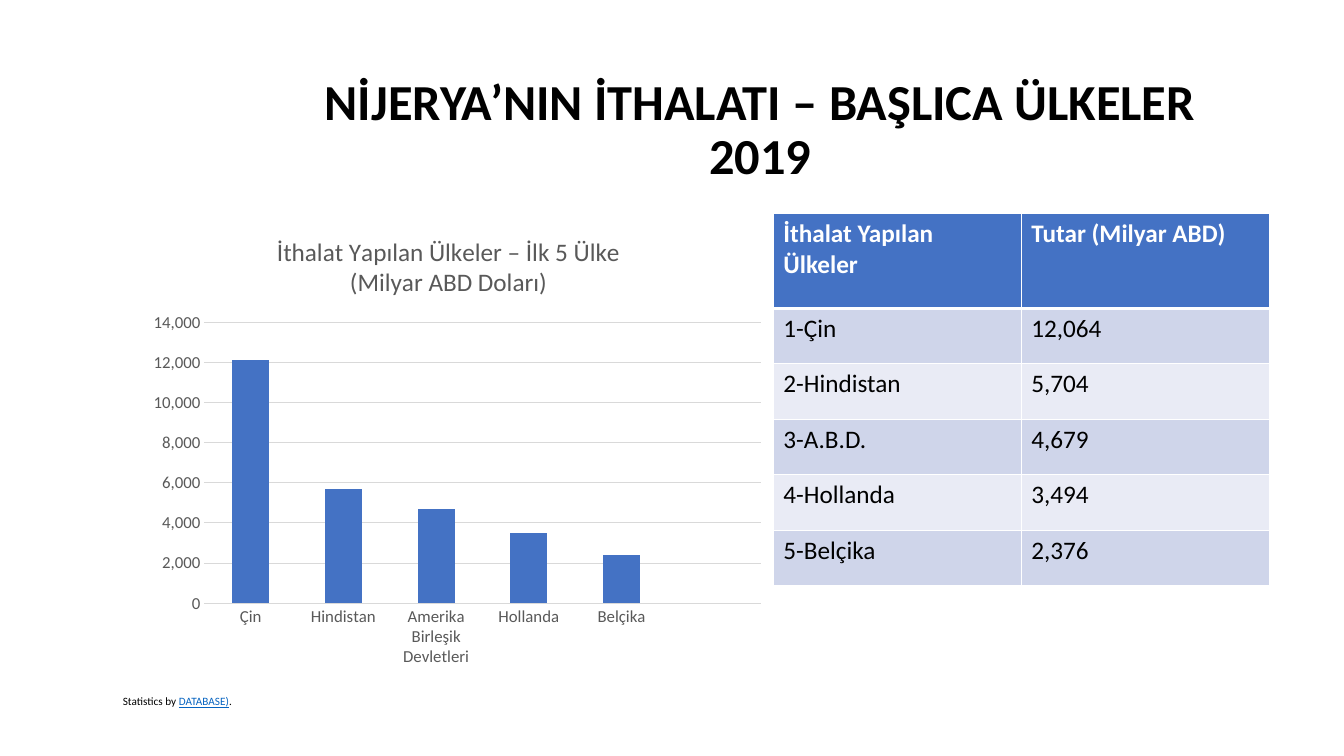
from dataclasses import dataclass

from pptx import Presentation
from pptx.chart.data import CategoryChartData
from pptx.dml.color import RGBColor
from pptx.enum.chart import XL_CHART_TYPE, XL_TICK_MARK
from pptx.enum.text import MSO_ANCHOR, PP_ALIGN
from pptx.oxml import parse_xml
from pptx.oxml.ns import nsdecls, qn
from pptx.util import Inches, Pt


@dataclass(frozen=True)
class Theme:
    font: str = "Calibri"
    black: str = "000000"
    white: str = "FFFFFF"
    blue: str = "4472C4"
    gray: str = "595959"
    grid: str = "D9D9D9"
    link: str = "0563C1"
    bands: tuple = ("CFD5EA", "E9EBF5")
    title: int = 36
    body: int = 18
    axis: int = 12
    note: int = 8


THEME = Theme()
ROWS = [
    ("İthalat Yapılan Ülkeler", "Tutar (Milyar ABD)"),
    ("1-Çin", "12,064"),
    ("2-Hindistan", "5,704"),
    ("3-A.B.D.", "4,679"),
    ("4-Hollanda", "3,494"),
    ("5-Belçika", "2,376"),
]
IMPORTS = [
    ("Çin", 12100),
    ("Hindistan", 5700),
    ("Amerika Birleşik Devletleri", 4700),
    ("Hollanda", 3500),
    ("Belçika", 2400),
    ("", None),
]


def set_attrs(target, values):
    for name, value in values.items():
        setattr(target, name, value)


def style_font(font, size, color, **extra):
    set_attrs(font, {"name": THEME.font, "size": Pt(size), **extra})
    font.color.rgb = RGBColor.from_string(color)


def add_run(p, text, size, color, **extra):
    r = p.add_run()
    r.text = text
    style_font(r.font, size, color, **extra)


def add_text(s, box, runs, anchor, **paragraph):
    tf = s.shapes.add_textbox(*map(Inches, box)).text_frame
    set_attrs(tf, {"word_wrap": True, "vertical_anchor": anchor})
    p = tf.paragraphs[0]
    set_attrs(p, paragraph)
    for text, size, color, extra in runs:
        add_run(p, text, size, color, **extra)


def set_border(cell, widths):
    tc_pr = cell._tc.get_or_add_tcPr()
    for i, (side, width) in enumerate(widths.items()):
        tc_pr.insert(i, parse_xml(
            f'<a:ln{side} {nsdecls("a")} w="{Pt(width)}"><a:solidFill>'
            f'<a:srgbClr val="{THEME.white}"/></a:solidFill></a:ln{side}>'))


def add_table(s, box, rows, header_height, row_height):
    table = s.shapes.add_table(len(rows), len(rows[0]), *map(Inches, box)).table
    for i, values in enumerate(rows):
        header = i == 0
        table.rows[i].height = Inches(header_height if header else row_height)
        fill = THEME.blue if header else THEME.bands[(i - 1) % 2]
        color = THEME.white if header else THEME.black
        for j, text in enumerate(values):
            cell = table.cell(i, j)
            cell.fill.solid()
            cell.fill.fore_color.rgb = RGBColor.from_string(fill)
            set_border(cell, {"L": 1, "R": 1, "T": 3 if i == 1 else 1, "B": 3 if header else 1})
            add_run(cell.text_frame.paragraphs[0], text, THEME.body, color, bold=header)


def set_layout(parent, index, target="", **place):
    old = parent.find(qn("c:layout"))
    if old is not None:
        parent.remove(old)
    inner = f'<c:layoutTarget val="{target}"/>' if target else ""
    inner += "".join(f'<c:{k}Mode val="edge"/>' for k in ("x", "y"))
    inner += "".join(f'<c:{k} val="{v}"/>' for k, v in place.items())
    parent.insert(index, parse_xml(
        f'<c:layout {nsdecls("c")}><c:manualLayout>{inner}</c:manualLayout></c:layout>'))


def style_line(line):
    line.color.rgb = RGBColor.from_string(THEME.grid)
    line.width = Pt(0.75)


def add_chart(s, box, data, title_lines):
    chart_data = CategoryChartData(number_format="#,##0")
    chart_data.categories = [name for name, _ in data]
    chart_data.add_series("Series 1", [value for _, value in data])
    chart = s.shapes.add_chart(
        XL_CHART_TYPE.COLUMN_CLUSTERED, *map(Inches, box), chart_data).chart
    set_attrs(chart, {"has_legend": False, "has_title": True})
    style_font(chart.font, 10, THEME.black)

    tf = chart.chart_title.text_frame
    for i, text in enumerate(title_lines):
        p = tf.add_paragraph() if i else tf.paragraphs[0]
        p.alignment = PP_ALIGN.CENTER
        add_run(p, text, THEME.body, THEME.gray, bold=False)
    set_layout(chart.element.find(".//" + qn("c:title")), 1, x=0.21, y=0.04)
    set_layout(chart.element.find(".//" + qn("c:plotArea")), 0, "inner",
               x=0.1, y=0.235, w=0.88, h=0.607)

    for axis in (chart.category_axis, chart.value_axis):
        set_attrs(axis, {"major_tick_mark": XL_TICK_MARK.NONE,
                         "minor_tick_mark": XL_TICK_MARK.NONE})
        style_font(axis.tick_labels.font, THEME.axis, THEME.gray)
    style_line(chart.category_axis.format.line)
    value_axis = chart.value_axis
    set_attrs(value_axis, {"minimum_scale": 0, "maximum_scale": 14000, "major_unit": 2000})
    set_attrs(value_axis.tick_labels, {"number_format": "#,##0", "number_format_is_linked": False})
    value_axis.format.line.fill.background()
    style_line(value_axis.major_gridlines.format.line)

    plot = chart.plots[0]
    set_attrs(plot, {"gap_width": 150, "vary_by_categories": False})
    fill = plot.series[0].format.fill
    fill.solid()
    fill.fore_color.rgb = RGBColor.from_string(THEME.blue)


def main():
    prs = Presentation()
    set_attrs(prs, {"slide_width": Inches(13.33), "slide_height": Inches(7.5)})
    s = prs.slides.add_slide(prs.slide_layouts[6])
    add_text(s, (2.78, 0.71, 9.52, 0.9),
             [("NİJERYA’NIN İTHALATI – BAŞLICA ÜLKELER 2019",
               THEME.title, THEME.black, {"bold": True})],
             MSO_ANCHOR.TOP, alignment=PP_ALIGN.CENTER, line_spacing=0.9)
    add_table(s, (7.67, 2.12, 4.92, 3.67), ROWS, 0.94, 0.55)
    add_chart(s, (1.4, 2.12, 6.27, 4.59), IMPORTS,
              ["İthalat Yapılan Ülkeler – İlk 5 Ülke", "(Milyar ABD Doları)"])
    add_text(s, (1.12, 6.71, 8.8, 0.5),
             [("Statistics by ", THEME.note, THEME.black, {}),
              ("DATABASE)", THEME.note, THEME.link, {"underline": True}),
              (".", THEME.note, THEME.black, {})],
             MSO_ANCHOR.MIDDLE)
    prs.save("out.pptx")


if __name__ == "__main__":
    main()
